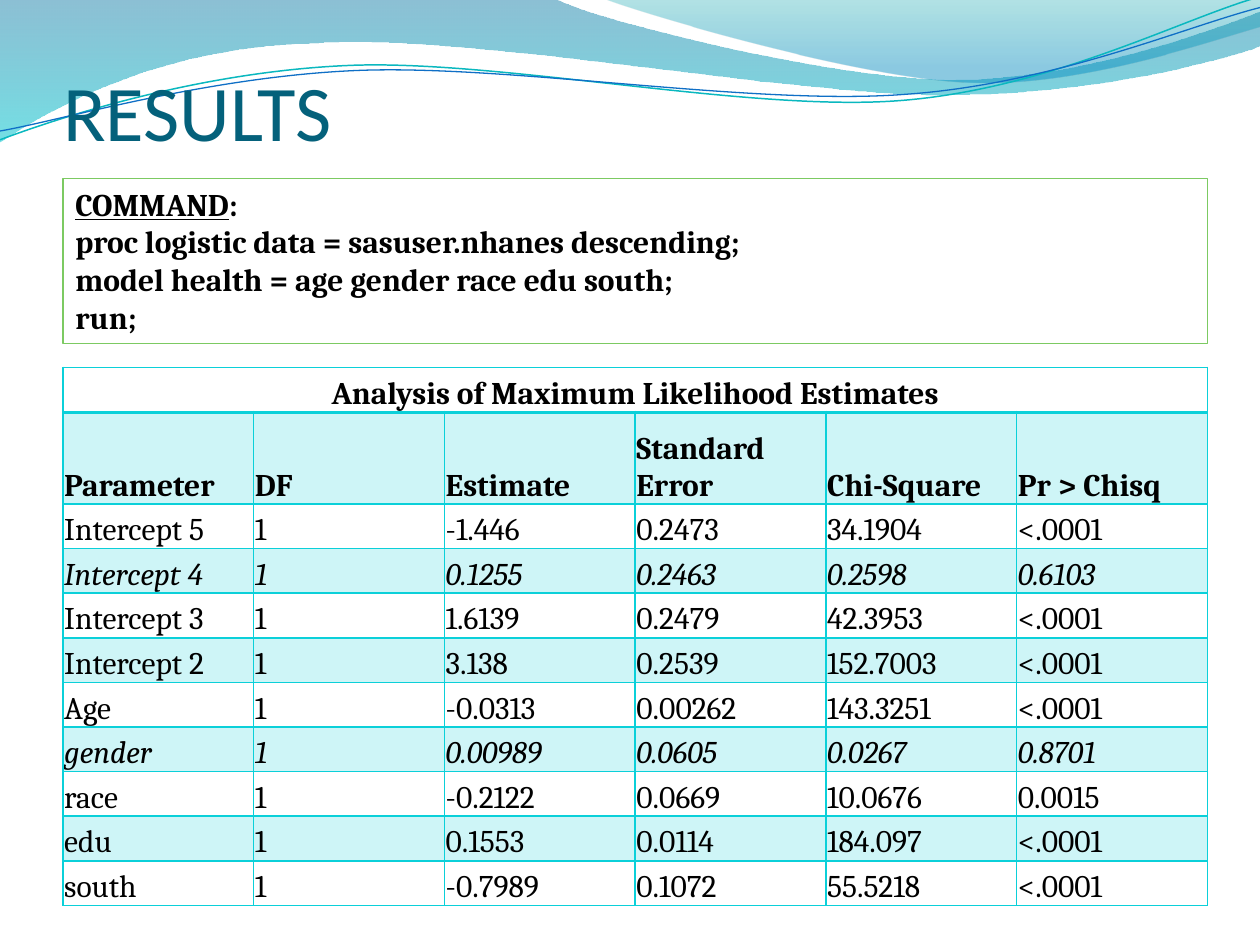
from lxml import etree
from pptx import Presentation
from pptx.dml.color import RGBColor
from pptx.enum.shapes import MSO_SHAPE
from pptx.enum.text import MSO_ANCHOR, MSO_AUTO_SIZE, PP_ALIGN
from pptx.oxml.ns import qn
from pptx.util import Inches, Pt

RECT = MSO_SHAPE.RECTANGLE
TOP, BOTTOM = MSO_ANCHOR.TOP, MSO_ANCHOR.BOTTOM
LEFT, CENTER = PP_ALIGN.LEFT, PP_ALIGN.CENTER
GROW = MSO_AUTO_SIZE.SHAPE_TO_FIT_TEXT

BLACK = RGBColor(0x00, 0x00, 0x00)
TITLE = RGBColor(0x04, 0x61, 0x7B)
CYAN = RGBColor(0x0B, 0xD0, 0xD9)
GREEN = RGBColor(0x7C, 0xCA, 0x62)
TEAL_LINE = RGBColor(0x0A, 0xB8, 0xBF)
BLUE_LINE = RGBColor(0x0F, 0x6F, 0xC6)
DEEP_BLUE = RGBColor(0x00, 0x74, 0xA1)
AQUA = RGBColor(0x00, 0xC6, 0xCF)
TEAL = RGBColor(0x00, 0xA1, 0xA9)
SKY = RGBColor(0x00, 0x8B, 0xBF)

MARGIN, WIDTH = 0.5, 109 / 12
COMMAND_TOP = 17 / 12
TABLE_TOP = COMMAND_TOP + 1.5

BACK_WAVE = [
    (0, 0), (4.4, -0.01),
    (4.76, 0.17, 6.64, 0.63, 7.58, 0.63), (8.53, 0.63, 9.58, 0.26, 10, 0.09),
    (10.01, 0.36),
    (9.83, 0.44, 8.7, 0.76, 7.46, 0.75), (6.22, 0.75, 3.82, 0.28, 2.57, 0.34),
    (1.29, 0.36, 0.46, 0.83, -0.01, 1.13), (0, 0),
]
FRONT_WAVE = [
    (4.79, -0.01),
    (5.09, 0.11, 6.82, 0.62, 7.69, 0.65), (8.56, 0.69, 9.61, 0.32, 10, 0.21),
    (10, 0), (4.79, -0.01),
]
TEAL_CURVE = [
    (0, 1.11),
    (0.48, 0.93, 1.58, 0.57, 2.77, 0.52), (3.95, 0.47, 5.93, 0.89, 7.13, 0.8),
    (8.33, 0.71, 9.38, 0.15, 9.98, -0.02),
]
BLUE_CURVE = [
    (0, 1.04),
    (0.47, 0.96, 1.64, 0.61, 2.83, 0.56), (4.03, 0.51, 5.97, 0.84, 7.17, 0.75),
    (8.36, 0.67, 9.41, 0.21, 10, 0.06),
]

COMMAND = [
    "COMMAND:",
    "proc logistic data = sasuser.nhanes descending;",
    "model health = age gender race edu south;",
    "run;",
]
CAPTION = "Analysis of Maximum Likelihood Estimates"
ROWS = [
    ["Parameter", "DF", "Estimate", "Standard Error", "Chi-Square", "Pr > Chisq"],
    ["Intercept 5", "1", "-1.446", "0.2473", "34.1904", "<.0001"],
    ["Intercept 4", "1", "0.1255", "0.2463", "0.2598", "0.6103"],
    ["Intercept 3", "1", "1.6139", "0.2479", "42.3953", "<.0001"],
    ["Intercept 2", "1", "3.138", "0.2539", "152.7003", "<.0001"],
    ["Age", "1", "-0.0313", "0.00262", "143.3251", "<.0001"],
    ["gender", "1", "0.00989", "0.0605", "0.0267", "0.8701"],
    ["race", "1", "-0.2122", "0.0669", "10.0676", "0.0015"],
    ["edu", "1", "0.1553", "0.0114", "184.097", "<.0001"],
    ["south", "1", "-0.7989", "0.1072", "55.5218", "<.0001"],
]
NOT_SIGNIFICANT = ("Intercept 4", "gender")


def set_alpha(color_element, percent):
    etree.SubElement(color_element, qn("a:alpha")).set("val", str(percent * 1000))


class SlideBuilder:
    title_font, body_font = "Calibri", "Cambria"
    title_size, body_size = 45, 18

    def __init__(self, slide):
        self.s = slide

    def style(self, p, font, size, color, bold=False, italic=False):
        for r in p.runs:
            r.font.name, r.font.size = font, Pt(size)
            r.font.bold, r.font.italic = bold, italic
            r.font.color.rgb = color

    def outline(self, segments, closed):
        anchors = [(Inches(seg[-2]), Inches(seg[-1])) for seg in segments]
        builder = self.s.shapes.build_freeform(*anchors[0], scale=1.0)
        builder.add_line_segments(anchors[1:], close=closed)
        sp = builder.convert_to_shape()
        sp.shadow.inherit = False
        lines = list(sp._element.spPr.iter(qn("a:lnTo")))
        for line, seg in zip(lines, segments[1:]):
            if len(seg) == 6:
                line.tag = qn("a:cubicBezTo")
                for i in (0, 1):
                    x, y = seg[2 * i:2 * i + 2]
                    pt = etree.Element(qn("a:pt"), x=str(Inches(x) - sp.left),
                                       y=str(Inches(y) - sp.top))
                    line.insert(i, pt)
        return sp

    def wave(self, segments, stops):
        sp = self.outline(segments, True)
        sp.line.fill.background()
        sp.fill.gradient()
        sp.fill.gradient_angle = 270
        for stop, (position, color, _) in zip(sp.fill.gradient_stops, stops):
            stop.position, stop.color.rgb = position, color
        colors = sp._element.spPr.iter(qn("a:srgbClr"))
        for element, (_, _, alpha) in zip(list(colors), stops):
            set_alpha(element, alpha)

    def curve(self, segments, color, width):
        sp = self.outline(segments, False)
        sp.fill.background()
        sp.line.color.rgb, sp.line.width = color, Pt(width)

    def title(self, text, x, y, w, h):
        tf = self.s.shapes.add_textbox(Inches(x), Inches(y), Inches(w), Inches(h)).text_frame
        tf.word_wrap, tf.vertical_anchor = True, BOTTOM
        tf.margin_left = tf.margin_right = tf.margin_bottom = 0
        tf.text = text
        self.style(tf.paragraphs[0], self.title_font, self.title_size, TITLE)

    def command_box(self, lines, x, y, w, h):
        sp = self.s.shapes.add_shape(RECT, Inches(x), Inches(y), Inches(w), Inches(h))
        sp.shadow.inherit = False
        sp.fill.background()
        sp.line.color.rgb, sp.line.width = GREEN, Pt(0.75)
        tf = sp.text_frame
        tf.word_wrap, tf.auto_size, tf.vertical_anchor = True, GROW, TOP
        tf.text = "\n".join(lines)
        heading = tf.paragraphs[0]
        heading.text = lines[0].rstrip(":")
        heading.runs[0].font.underline = True
        heading.add_run().text = ":"
        for p in tf.paragraphs:
            p.alignment = LEFT
            self.style(p, self.body_font, self.body_size, BLACK, bold=True)

    def borders(self, cell, bottom=1, top=1):
        tc_pr = cell._tc.get_or_add_tcPr()
        for side, width in (("L", 1), ("R", 1), ("T", top), ("B", bottom)):
            ln = etree.SubElement(tc_pr, qn("a:ln" + side), w=str(Pt(width)))
            fill = etree.SubElement(ln, qn("a:solidFill"))
            etree.SubElement(fill, qn("a:srgbClr"), val=str(CYAN))

    def cell(self, cell, text, align=LEFT, bold=False, italic=False, shaded=False):
        cell.margin_left = cell.margin_right = cell.margin_top = Inches(0.01)
        cell.margin_bottom = 0
        cell.vertical_anchor = BOTTOM
        if shaded:
            cell.fill.solid()
            cell.fill.fore_color.rgb = CYAN
            set_alpha(cell._tc.tcPr.find(qn("a:solidFill"))[0], 20)
        else:
            cell.fill.background()
        p = cell.text_frame.paragraphs[0]
        p.text, p.alignment = text, align
        self.style(p, self.body_font, self.body_size, BLACK, bold, italic)

    def table(self, caption, rows, x, y, w, h, header_h):
        n_rows, n_cols = len(rows) + 1, len(rows[0])
        table = self.s.shapes.add_table(
            n_rows, n_cols, Inches(x), Inches(y), Inches(w), Inches(h)).table
        table.first_row = table.horz_banding = False
        for column in table.columns:
            column.width = Inches(w / n_cols)
        for i, row in enumerate(table.rows):
            row.height = Inches(header_h if i == 1 else (h - header_h) / (n_rows - 1))
            for cell in row.cells:
                self.borders(cell, bottom=2 if i == 0 else 1, top=2 if i == 1 else 1)
        table.cell(0, 0).merge(table.cell(0, n_cols - 1))
        self.cell(table.cell(0, 0), caption, CENTER, bold=True)
        for i, values in enumerate(rows, 1):
            for j, value in enumerate(values):
                self.cell(table.cell(i, j), value, bold=i == 1,
                          italic=values[0] in NOT_SIGNIFICANT, shaded=i % 2 == 1)


def main():
    prs = Presentation()
    prs.slide_width, prs.slide_height = Inches(10), Inches(7.5)
    b = SlideBuilder(prs.slides.add_slide(prs.slide_layouts[6]))
    b.wave(BACK_WAVE, [(0, DEEP_BLUE, 45), (1, AQUA, 55)])
    b.wave(FRONT_WAVE, [(0, TEAL, 30), (0.8, SKY, 45)])
    b.curve(TEAL_CURVE, TEAL_LINE, 0.85)
    b.curve(BLUE_CURVE, BLUE_LINE, 0.75)
    b.title("RESULTS", MARGIN, 0.5, 8.58, 0.75)
    b.table(CAPTION, ROWS, MARGIN, TABLE_TOP, WIDTH, 4.27, header_h=0.73)
    b.command_box(COMMAND, MARGIN, COMMAND_TOP, WIDTH, 1.31)
    prs.save("out.pptx")


if __name__ == "__main__":
    main()
